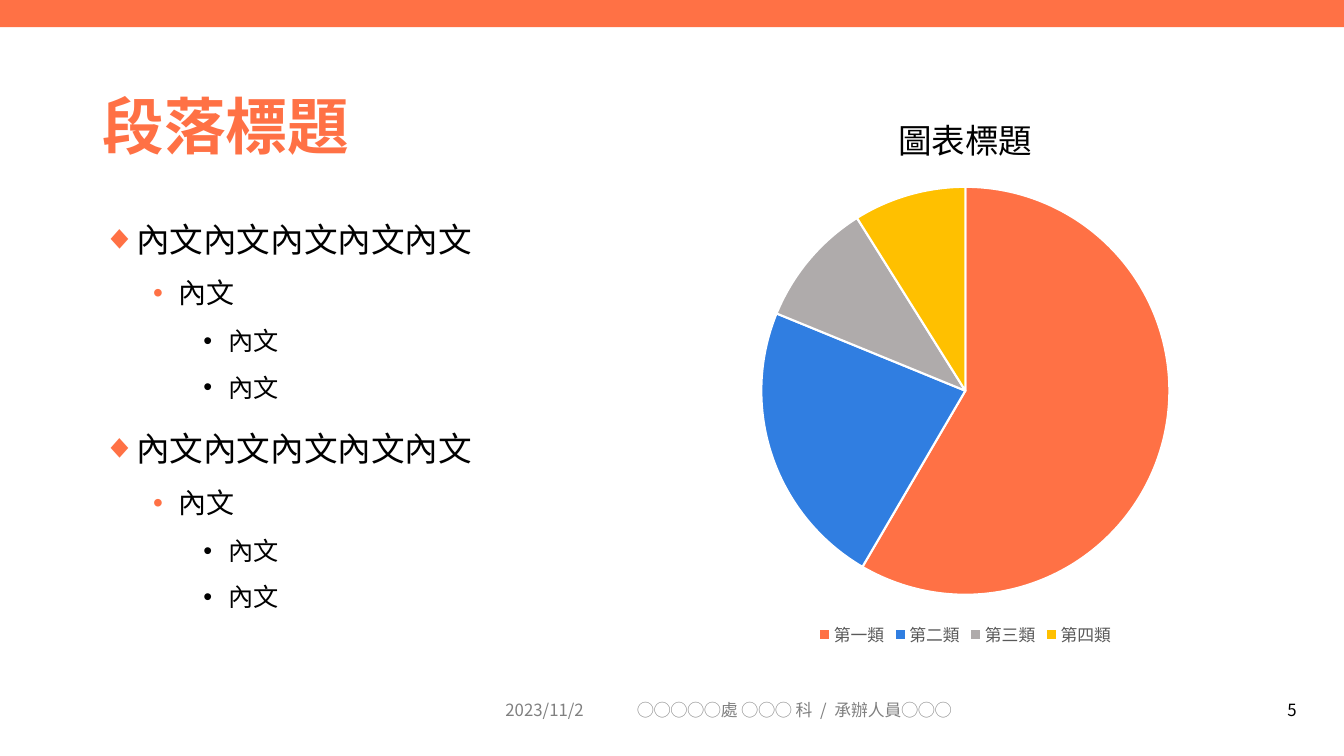
from lxml.etree import SubElement
from pptx import Presentation
from pptx.chart.data import CategoryChartData
from pptx.dml.color import RGBColor
from pptx.enum.chart import XL_CHART_TYPE as ChartType, XL_LEGEND_POSITION as LegendPlace
from pptx.enum.shapes import MSO_SHAPE as Preset
from pptx.enum.text import MSO_ANCHOR as Anchor, PP_ALIGN as Align
from pptx.oxml.ns import qn
from pptx.util import Inches, Pt

WIDTH, HEIGHT = 13.33, 7.5
FACE = "Noto Sans CJK TC"
ORANGE, BLACK, GREY = "FF7145", "000000", "808080"
MARGIN, COLUMN = 0.92, 5.67
FOOTER_TOP, FOOTER_HEIGHT = 6.84, 0.4

TITLE = "段落標題"
SECTION = [(0, "內文內文內文內文內文"), (1, "內文"), (2, "內文"), (2, "內文")]
OUTLINE = SECTION * 2
LEVELS = [
    {"size": 24, "before": 10, "bullet": "◆", "colour": ORANGE},
    {"size": 20, "before": 5, "bullet": "•", "colour": ORANGE},
    {"size": 18, "before": 5, "bullet": "•", "colour": BLACK},
]
FOOTER = [
    ("2023/11/2", 4.76, 1.13, Align.RIGHT, GREY),
    ("◯◯◯◯◯處 ◯◯◯ 科  /  承辦人員◯◯◯", 6.22, 4.5, Align.LEFT, GREY),
    ("5", 12.3, 0.66, Align.RIGHT, BLACK),
]
CHART_TITLE = "圖表標題"
SLICES = [
    ("第一類", 59, ORANGE),
    ("第二類", 23, "307EE1"),
    ("第三類", 10, "AFABAB"),
    ("第四類", 9, "FFC000"),
]
PLOT_AREA = {"x": 0.143, "y": 0.176, "w": 0.714, "h": 0.724}


def paint(target, colour):
    target.solid()
    target.fore_color.rgb = RGBColor.from_string(colour)


def style(font, size, colour, bold=False):
    for name, value in {"size": Pt(size), "bold": bold, "name": FACE}.items():
        setattr(font, name, value)
    paint(font.fill, colour)
    east_asian = SubElement(font._rPr, qn("a:ea"), typeface=FACE)
    font._rPr.find(qn("a:latin")).addnext(east_asian)


def add_span(para, text, size, colour, bold=False):
    span = para.add_run()
    span.text = text
    style(span.font, size, colour, bold)


def add_box(page, left, top, width, height, anchor=Anchor.MIDDLE):
    box = page.shapes.add_textbox(*map(Inches, (left, top, width, height)))
    frame = box.text_frame
    frame.word_wrap = True
    frame.vertical_anchor = anchor
    return frame


def add_bullet(para, level, bullet, colour):
    properties = para._p.get_or_add_pPr()
    properties.set("marL", str(Inches(0.25 + 0.5 * level)))
    properties.set("indent", str(-Inches(0.25)))
    bullet_colour = SubElement(properties, qn("a:buClr"))
    SubElement(bullet_colour, qn("a:srgbClr"), val=colour)
    SubElement(properties, qn("a:buFont"), typeface="Arial")
    SubElement(properties, qn("a:buChar"), char=bullet)


def add_outline(page):
    frame = add_box(page, MARGIN, 2, COLUMN, 4.76, Anchor.TOP)
    for index, (level, text) in enumerate(OUTLINE):
        look = LEVELS[level]
        para = frame.add_paragraph() if index else frame.paragraphs[0]
        para.level = level
        para.line_spacing = 1.3
        para.space_before = Pt(look["before"] if index else 0)
        add_bullet(para, level, look["bullet"], look["colour"])
        add_span(para, text, look["size"], BLACK)


def add_pie(page):
    names, values, colours = zip(*SLICES)
    data = CategoryChartData()
    data.categories = names
    data.add_series("Series 1", values)
    place = map(Inches, (WIDTH - MARGIN - COLUMN, 0.87, COLUMN, 5.59))
    chart = page.shapes.add_chart(ChartType.PIE, *place, data).chart
    chart.font.size = Pt(10)
    chart.font.name = "Calibri"
    chart.has_title = True
    add_span(chart.chart_title.text_frame.paragraphs[0], CHART_TITLE, 24, BLACK)
    chart.has_legend = True
    chart.legend.position = LegendPlace.BOTTOM
    chart.legend.include_in_layout = False
    style(chart.legend.font, 12, "595959")
    plot = chart.plots[0]
    plot.vary_by_categories = True
    for index, colour in enumerate(colours):
        form = plot.series[0].points[index].format
        paint(form.fill, colour)
        paint(form.line.fill, "FFFFFF")
        form.line.width = Pt(1.5)
    area = chart._chartSpace.chart.plotArea
    layout = area.find(qn("c:layout"))
    if layout is None:
        layout = SubElement(area, qn("c:layout"))
        area.insert(0, layout)
    manual = SubElement(layout, qn("c:manualLayout"))
    SubElement(manual, qn("c:layoutTarget"), val="inner")
    for axis in "xy":
        SubElement(manual, qn(f"c:{axis}Mode"), val="edge")
    for key, share in PLOT_AREA.items():
        SubElement(manual, qn(f"c:{key}"), val=str(share))


def main():
    """Build the slide with an outline and a pie chart."""
    deck = Presentation()
    deck.slide_width, deck.slide_height = Inches(WIDTH), Inches(HEIGHT)
    page = deck.slides.add_slide(deck.slide_layouts[6])
    band = page.shapes.add_shape(Preset.RECTANGLE, 0, 0, deck.slide_width, Inches(0.27))
    band.shadow.inherit = False
    paint(band.fill, ORANGE)
    band.line.fill.background()
    heading = add_box(page, MARGIN, 0.74, WIDTH - 2 * MARGIN, 1.1).paragraphs[0]
    heading.line_spacing = 0.9
    add_span(heading, TITLE, 44, ORANGE, True)
    add_outline(page)
    for text, left, width, align, colour in FOOTER:
        para = add_box(page, left, FOOTER_TOP, width, FOOTER_HEIGHT).paragraphs[0]
        para.alignment = align
        add_span(para, text, 12, colour)
    add_pie(page)
    deck.save("out.pptx")


if __name__ == "__main__":
    main()
